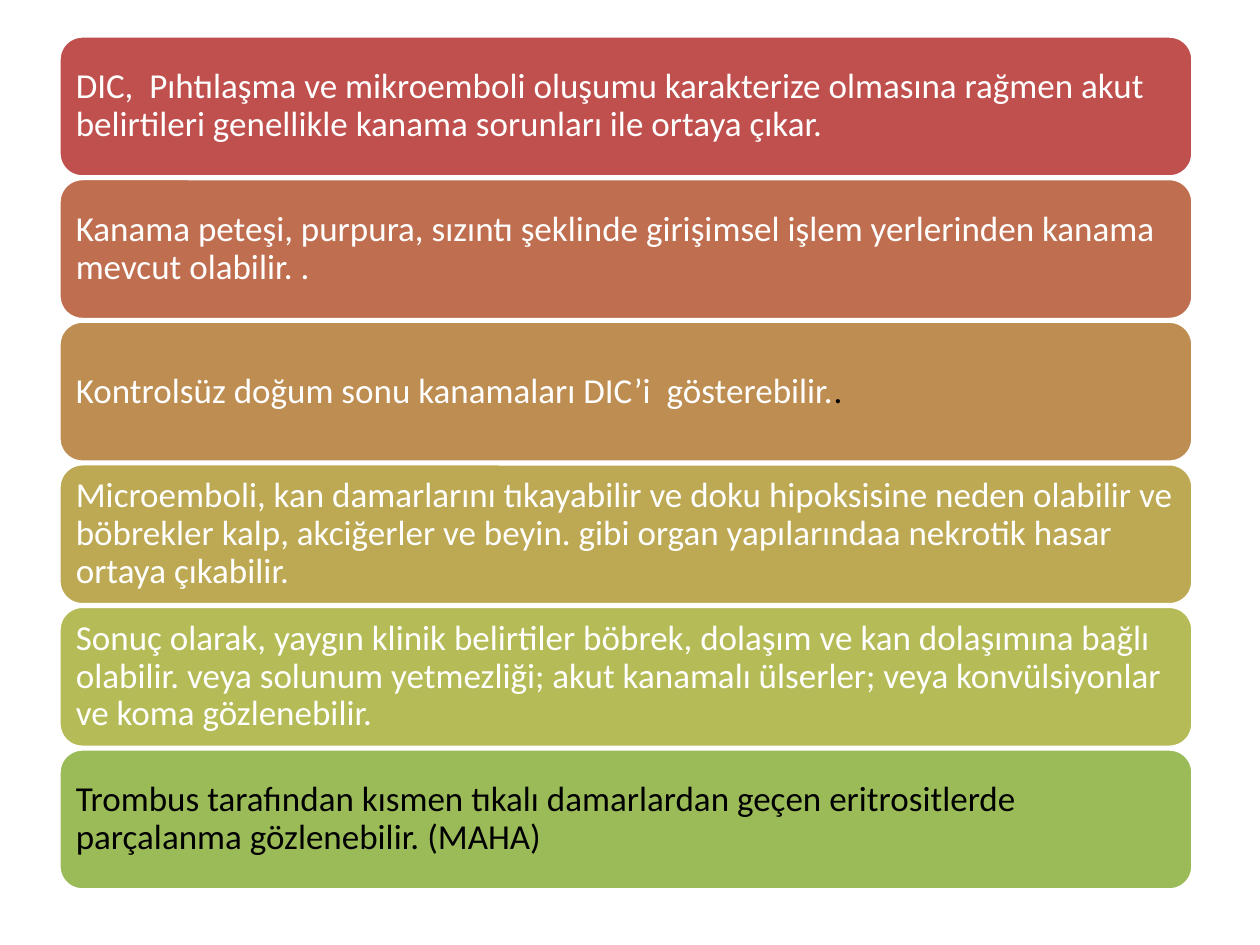
from pptx import Presentation
from pptx.dml.color import RGBColor
from pptx.enum.shapes import MSO_SHAPE
from pptx.enum.text import MSO_ANCHOR, PP_ALIGN
from pptx.util import Pt

ROUNDED = MSO_SHAPE.ROUNDED_RECTANGLE
MIDDLE = MSO_ANCHOR.MIDDLE
LEFT = PP_ALIGN.LEFT

WHITE, BLACK = "FFFFFF", "000000"
BARS = [
    ("C0504D", [("DIC,  Pıhtılaşma ve mikroemboli oluşumu karakterize olmasına rağmen akut "
                 "belirtileri genellikle kanama sorunları ile ortaya çıkar.", WHITE)]),
    ("BF6F4F", [("Kanama peteşi, purpura, sızıntı şeklinde girişimsel işlem yerlerinden "
                 "kanama mevcut olabilir. .", WHITE)]),
    ("BE8D52", [("Kontrolsüz doğum sonu kanamaları DIC’i  gösterebilir.", WHITE),
                (".", BLACK)]),
    ("BDA954", [("Microemboli, kan damarlarını tıkayabilir ve doku hipoksisine neden olabilir "
                 "ve böbrekler kalp, akciğerler ve beyin. gibi organ yapılarındaa nekrotik "
                 "hasar ortaya çıkabilir.", WHITE)]),
    ("B5BC57", [("Sonuç olarak, yaygın klinik belirtiler böbrek, dolaşım ve kan dolaşımına "
                 "bağlı olabilir. veya solunum yetmezliği; akut kanamalı ülserler; veya "
                 "konvülsiyonlar ve koma gözlenebilir.", WHITE)]),
    ("9BBB59", [("Trombus tarafından kısmen tıkalı damarlardan geçen eritrositlerde "
                 "parçalanma gözlenebilir. (MAHA)", BLACK)]),
]

SLIDE_W, SLIDE_H = 1260, 945
BAR_X, BAR_W, BAR_H = 59, 1134, 141
STACK_TOP, STACK_BOTTOM = 36, 890
INSET = 10


def px(n):
    return round(n * 914400 / 126)


def rgb(value):
    return RGBColor.from_string(value)


def add_bar(slide, y, fill, runs):
    sp = slide.shapes.add_shape(ROUNDED, px(BAR_X), px(y), px(BAR_W), px(BAR_H))
    sp.shadow.inherit = False
    sp.fill.solid()
    sp.fill.fore_color.rgb = rgb(fill)
    sp.line.color.rgb = rgb(WHITE)
    sp.line.width = Pt(2)
    tf = sp.text_frame
    tf.word_wrap = True
    tf.vertical_anchor = MIDDLE
    tf.margin_left = tf.margin_right = tf.margin_top = tf.margin_bottom = px(INSET)
    p = tf.paragraphs[0]
    p.alignment = LEFT
    p.line_spacing = 0.9
    for text, color in runs:
        r = p.add_run()
        r.text = text
        r.font.name = "Calibri"
        r.font.size = Pt(20)
        r.font.color.rgb = rgb(color)


def main():
    prs = Presentation()
    prs.slide_width, prs.slide_height = px(SLIDE_W), px(SLIDE_H)
    slide = prs.slides.add_slide(prs.slide_layouts[6])
    pitch = (STACK_BOTTOM - STACK_TOP - BAR_H) / (len(BARS) - 1)
    for i, (fill, runs) in enumerate(BARS):
        add_bar(slide, STACK_TOP + i * pitch, fill, runs)
    prs.save("out.pptx")


if __name__ == "__main__":
    main()
